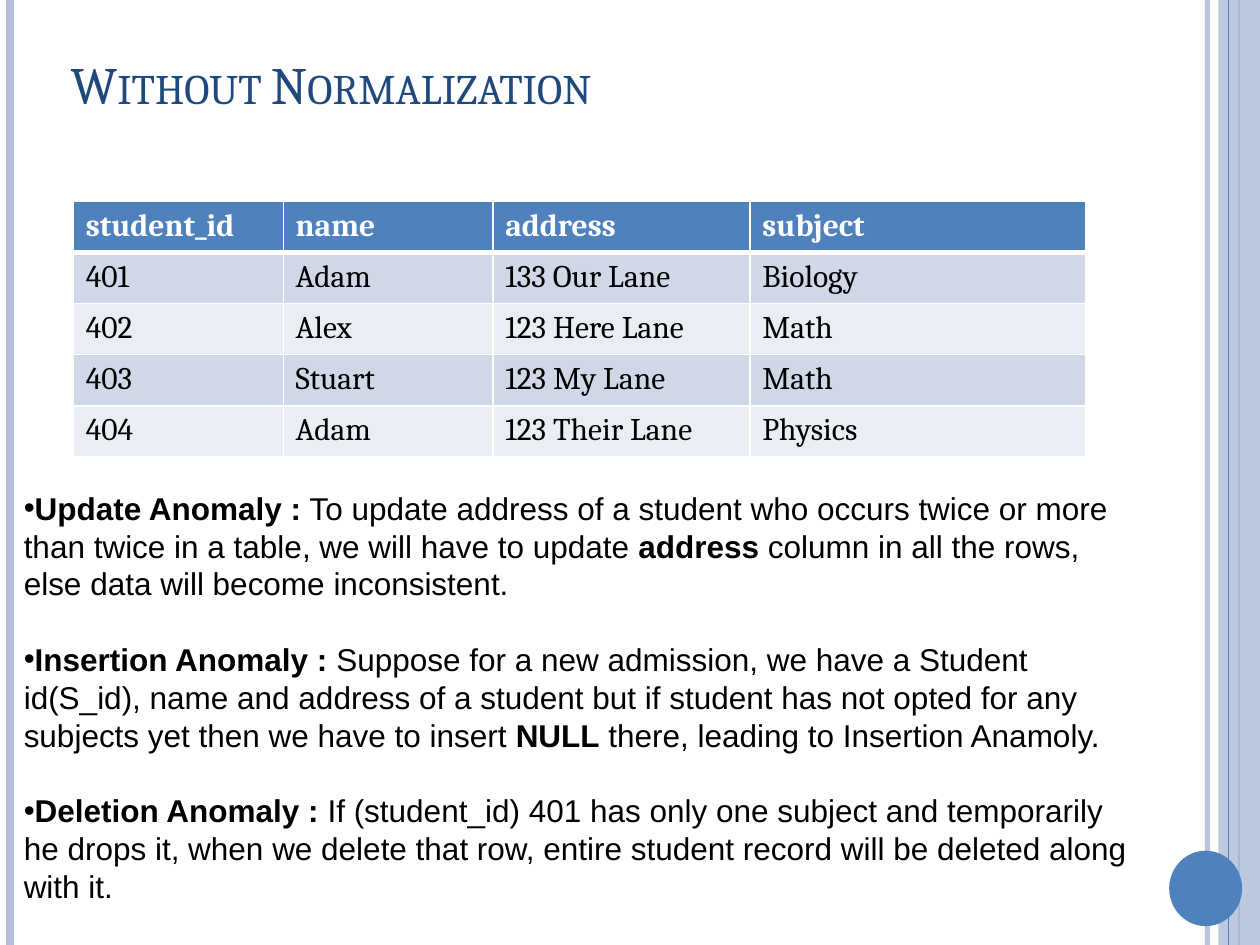
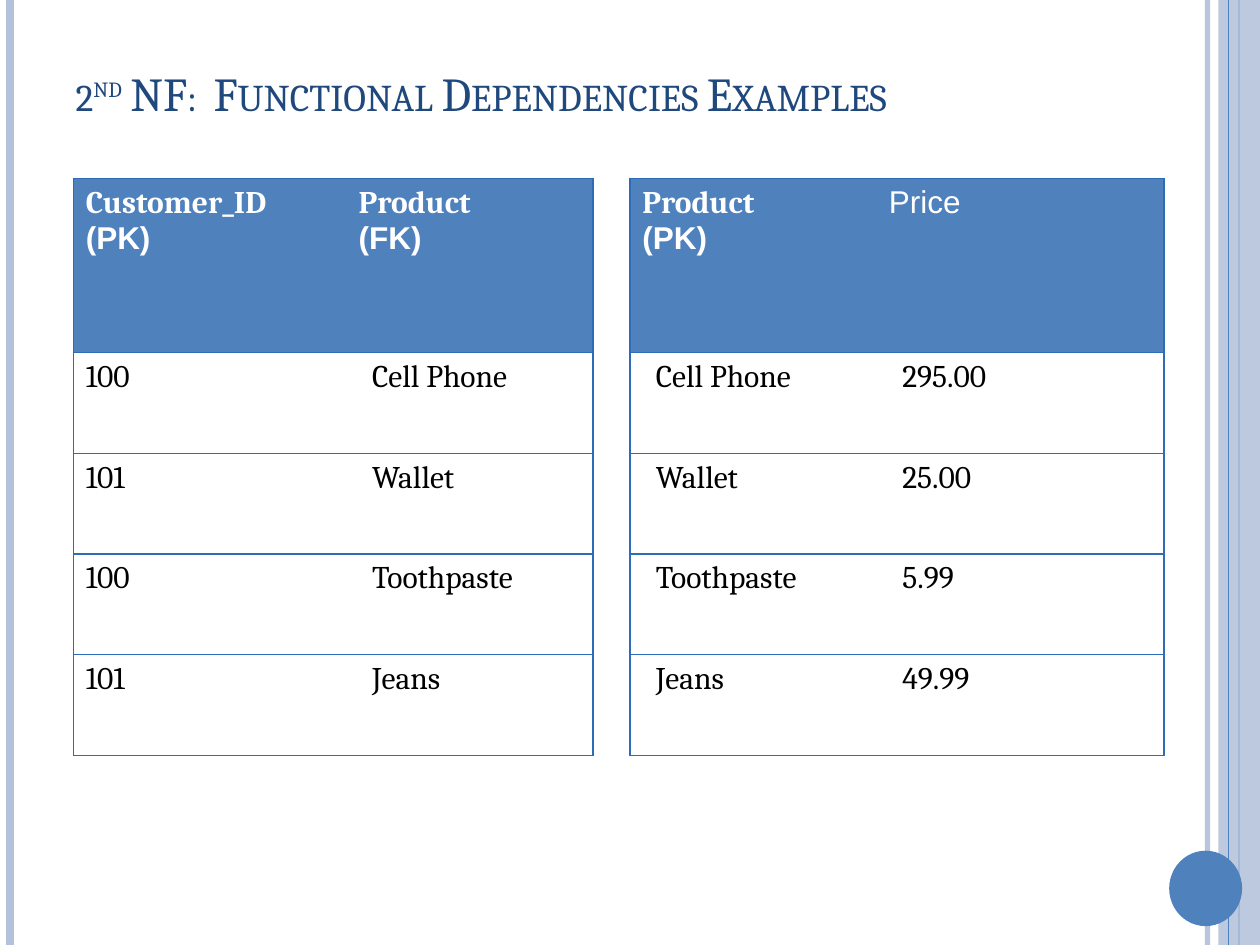
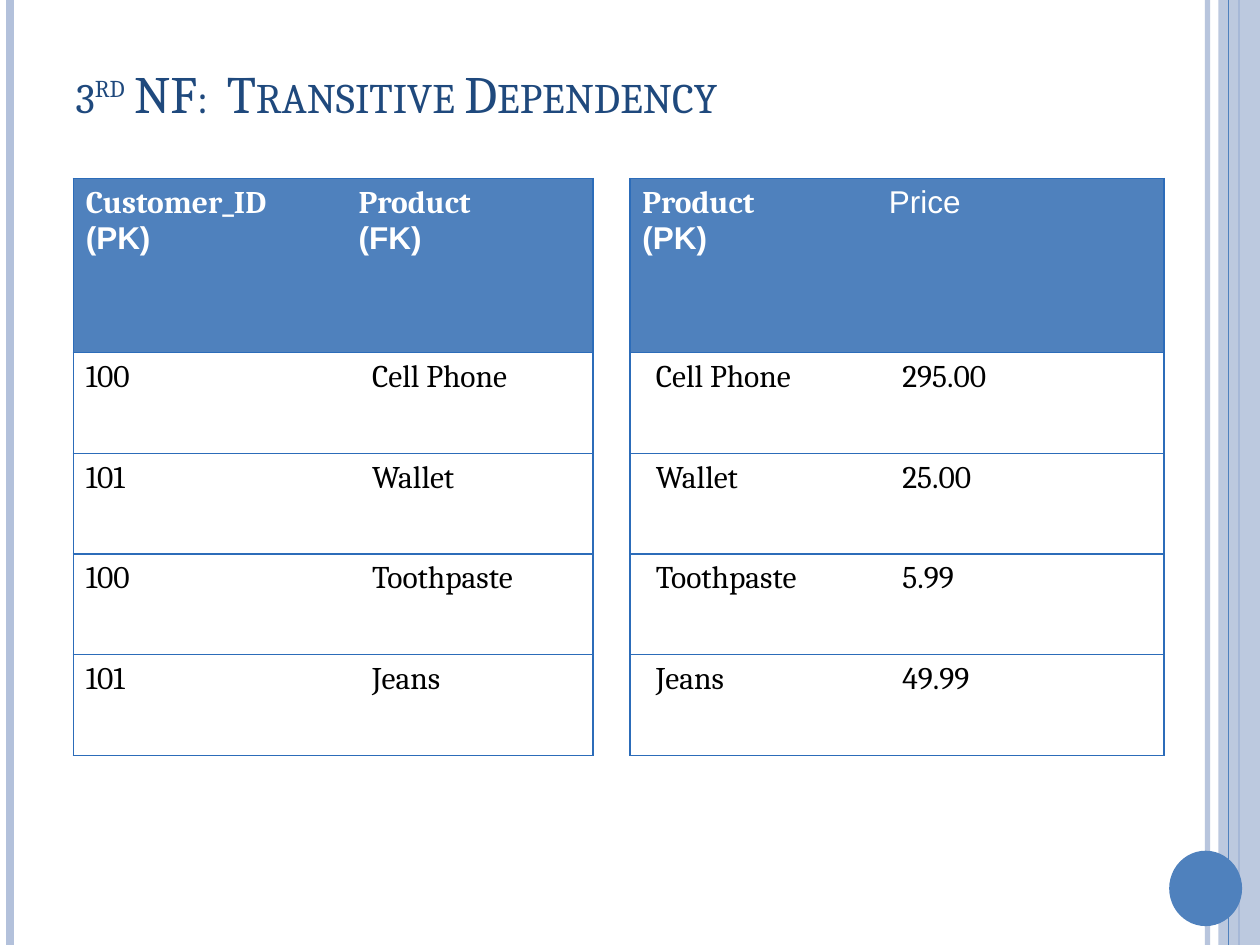
import lxml.etree
import pptx
import pptx.dml.color
import pptx.enum.shapes
import pptx.enum.text
import pptx.oxml.ns
import pptx.util

Cm, Pt = pptx.util.Cm, pptx.util.Pt
qn = pptx.oxml.ns.qn

SLIDE_W, SLIDE_H = 25.4, 19.05
COLORS = {
    "accent": "4F81BD", "pale": "B3C1DB", "title": "1F497D", "grid": "2C6CB9",
    "band_dark": "D0D8E8", "band_light": "E9EDF4", "white": "FFFFFF", "black": "000000",
}
TITLE = {"name": "Cambria", "size": Pt(30), "bold": False, "color": "title"}
HEAD = {"name": "Cambria", "size": Pt(18), "bold": True, "color": "white"}
CELL = {**HEAD, "bold": False, "color": "black"}
KEY = {**HEAD, "name": "Arial"}
PLAIN_HEAD = {**KEY, "bold": False}
NOTE = {**CELL, "name": "Arial"}
NOTE_BOLD = {**NOTE, "bold": True}
CELL_MARGIN, CELL_INDENT = 0.25, 0.52


def rgb(color):
    return pptx.dml.color.RGBColor.from_string(COLORS[color])


def add_run(paragraph, text, style):
    run = paragraph.add_run()
    run.text = text
    for key, value in style.items():
        if key == "color":
            run.font.color.rgb = rgb(value)
        else:
            setattr(run.font, key, value)
    return run


def set_alpha(properties, percent):
    for color in properties.iter(qn("a:srgbClr")):
        lxml.etree.SubElement(color, qn("a:alpha"), val=str(percent * 1000))


# Shared frame: side lines, right band and corner disc
def add_rule(slide, x, color, width, alpha=100):
    rule = slide.shapes.add_connector(
        pptx.enum.shapes.MSO_CONNECTOR.STRAIGHT, Cm(x), 0, Cm(x), Cm(SLIDE_H))
    rule.line.color.rgb = rgb(color)
    rule.line.width = Pt(width)
    properties = rule._element.spPr
    if alpha < 100:
        set_alpha(properties, alpha)
    lxml.etree.SubElement(properties, qn("a:effectLst"))


def add_solid(slide, kind, box, color, alpha=100):
    solid = slide.shapes.add_shape(kind, *map(Cm, box))
    solid.shadow.inherit = False
    solid.fill.solid()
    solid.fill.fore_color.rgb = rgb(color)
    solid.line.fill.background()
    if alpha < 100:
        set_alpha(solid._element.spPr, alpha)


def add_frame(slide):
    kinds = pptx.enum.shapes.MSO_SHAPE
    add_rule(slide, 24.34, "pale", 3, 93)
    add_rule(slide, 0.21, "pale", 4.5)
    add_rule(slide, 24.98, "accent", 1.5)
    add_solid(slide, kinds.RECTANGLE, (24.56, 0, 0.84, SLIDE_H), "pale", 87)
    add_rule(slide, 24.77, "accent", 0.75)
    add_solid(slide, kinds.OVAL, (23.57, 17.15, 1.47, 1.52), "accent")


# Title: (text, baseline shift in percent) pieces in small capitals
def set_title(slide, box, pieces, size=30):
    title = slide.shapes.title
    for key, value in zip(("left", "top", "width", "height"), box):
        setattr(title, key, Cm(value))
    frame = title.text_frame
    frame.auto_size = pptx.enum.text.MSO_AUTO_SIZE.NONE
    frame.vertical_anchor = pptx.enum.text.MSO_ANCHOR.MIDDLE
    paragraph = frame.paragraphs[0]
    paragraph.alignment = pptx.enum.text.PP_ALIGN.LEFT
    for text, shift in pieces:
        properties = add_run(paragraph, text, {**TITLE, "size": Pt(size)})._r.get_or_add_rPr()
        properties.set("cap", "small")
        if shift:
            properties.set("baseline", str(shift * 1000))


def new_slide(deck, box, pieces, size=30):
    slide = deck.slides.add_slide(deck.slide_layouts[5])
    add_frame(slide)
    set_title(slide, box, pieces, size)
    return slide


# Table parts
def set_borders(cell, borders):
    properties = cell._tc.get_or_add_tcPr()
    for side in "LRTB":
        color, width = borders.get(side, (None, 0))
        edge = lxml.etree.SubElement(properties, qn(f"a:ln{side}"), w=str(Pt(width)))
        if color:
            paint = lxml.etree.SubElement(edge, qn("a:solidFill"))
            lxml.etree.SubElement(paint, qn("a:srgbClr"), val=COLORS[color])
        else:
            lxml.etree.SubElement(edge, qn("a:noFill"))


def fill_cell(cell, lines, borders, fill, indent=CELL_MARGIN):
    set_borders(cell, borders)
    if fill:
        cell.fill.solid()
        cell.fill.fore_color.rgb = rgb(fill)
    else:
        cell.fill.background()
    cell.margin_left = Cm(indent)
    frame = cell.text_frame
    for i, (text, style) in enumerate(lines):
        paragraph = frame.add_paragraph() if i else frame.paragraphs[0]
        add_run(paragraph, text, style)


def add_grid(slide, left, top, widths, heights):
    table = slide.shapes.add_table(
        len(heights), len(widths), Cm(left), Cm(top),
        Cm(sum(widths)), Cm(sum(heights))).table
    for column, width in zip(table.columns, widths):
        column.width = Cm(width)
    for row, height in zip(table.rows, heights):
        row.height = Cm(height)
    return table


def add_banded_table(slide, left, top, widths, row_height, rows):
    table = add_grid(slide, left, top, widths, [row_height] * len(rows))
    for r, row in enumerate(rows):
        borders = {side: ("white", 1) for side in "LRTB"}
        if r < 2:
            borders["T" if r else "B"] = ("white", 3)
        fill = ("band_dark" if r % 2 else "band_light") if r else "accent"
        for c, text in enumerate(row):
            fill_cell(table.cell(r, c), [(text, CELL if r else HEAD)], borders, fill)


def add_relation(slide, left, top, widths, headings, rows, indented):
    table = add_grid(slide, left, top, widths, [3.51] + [2.03] * len(rows))
    body = [[[(text, CELL)] for text in row] for row in rows]
    for r, row in enumerate([headings] + body):
        for c, lines in enumerate(row):
            sides = "TB" + "L" * (c == 0) + "R" * (c == len(row) - 1)
            fill_cell(table.cell(r, c), lines, {side: ("grid", 1) for side in sides},
                      None if r else "accent",
                      CELL_INDENT if r and c in indented else CELL_MARGIN)


# Bulleted notes: (text, bold) pieces per paragraph
def add_notes(slide, box, notes):
    frame = slide.shapes.add_textbox(*map(Cm, box)).text_frame
    frame.word_wrap = True
    for i, pieces in enumerate(notes):
        paragraph = frame.add_paragraph() if i else frame.paragraphs[0]
        paragraph.line_spacing = Pt(21.6)
        paragraph.space_before = Pt(21.6 if i else 0)
        properties = paragraph._p.get_or_add_pPr()
        properties.set("marL", "0")
        properties.set("indent", "0")
        lxml.etree.SubElement(properties, qn("a:buFont"), typeface="Arial")
        lxml.etree.SubElement(properties, qn("a:buChar"), char="•")
        for text, bold in pieces:
            add_run(paragraph, text, NOTE_BOLD if bold else NOTE)


STUDENTS = [
    ("student_id", "name", "address", "subject"),
    ("401", "Adam", "133 Our Lane", "Biology"),
    ("402", "Alex", "123 Here Lane", "Math"),
    ("403", "Stuart", "123 My Lane", "Math"),
    ("404", "Adam", "123 Their Lane", "Physics"),
]
ANOMALIES = [
    [("Update Anomaly :", True),
     (" To update address of a student who occurs twice or more than twice in a table, "
      "we will have to update ", False),
     ("address", True),
     (" column in all the rows, else data will become inconsistent.", False)],
    [("Insertion Anomaly :", True),
     (" Suppose for a new admission, we have a Student id(S_id), name and address of a "
      "student but if student has not opted for any subjects yet then we have to insert ", False),
     ("NULL", True),
     (" there, leading to Insertion Anamoly.", False)],
    [("Deletion Anomaly :", True),
     (" If (student_id) 401 has only one subject and temporarily he drops it, when we delete "
      "that row, entire student record will be deleted along with it.", False)],
]
PURCHASES = [("100", "Cell Phone"), ("101", "Wallet"), ("100", "Toothpaste"), ("101", "Jeans")]
PRICES = [("Cell Phone", "295.00"), ("Wallet", "25.00"), ("Toothpaste", "5.99"), ("Jeans", "49.99")]


def add_anomaly_slide(deck):
    slide = new_slide(deck, (1.17, 0.58, 22.02, 2.21), [("Without Normalization", 0)])
    add_banded_table(slide, 1.48, 4.06, (4.23, 4.23, 5.18, 6.77), 1.03, STUDENTS)
    add_notes(slide, (0.23, 9.73, 23.04, 8.71), ANOMALIES)


def add_normal_form_slide(deck, number, ordinal, subject, size):
    slide = new_slide(deck, (1.27, 0.76, 22.02, 2.21),
                      [(number, 0), (ordinal, 30), (f" NF:  {subject}", 0)], size)
    add_relation(slide, 1.48, 3.6, (5.5, 4.97),
                 [[("Customer_ID", HEAD), ("(PK)", KEY)], [("Product", HEAD), ("(FK)", KEY)]],
                 PURCHASES, indented=(1,))
    add_relation(slide, 12.7, 3.6, (4.97, 5.79),
                 [[("Product", HEAD), ("(PK)", KEY)], [("Price", PLAIN_HEAD)]],
                 PRICES, indented=(0, 1))


def main():
    deck = pptx.Presentation()
    deck.slide_width, deck.slide_height = Cm(SLIDE_W), Cm(SLIDE_H)
    add_anomaly_slide(deck)
    add_normal_form_slide(deck, "2", "nd", "Functional Dependencies Examples", 27)
    add_normal_form_slide(deck, "3", "rd", "Transitive Dependency", 30)
    deck.save("out.pptx")


if __name__ == "__main__":
    main()
